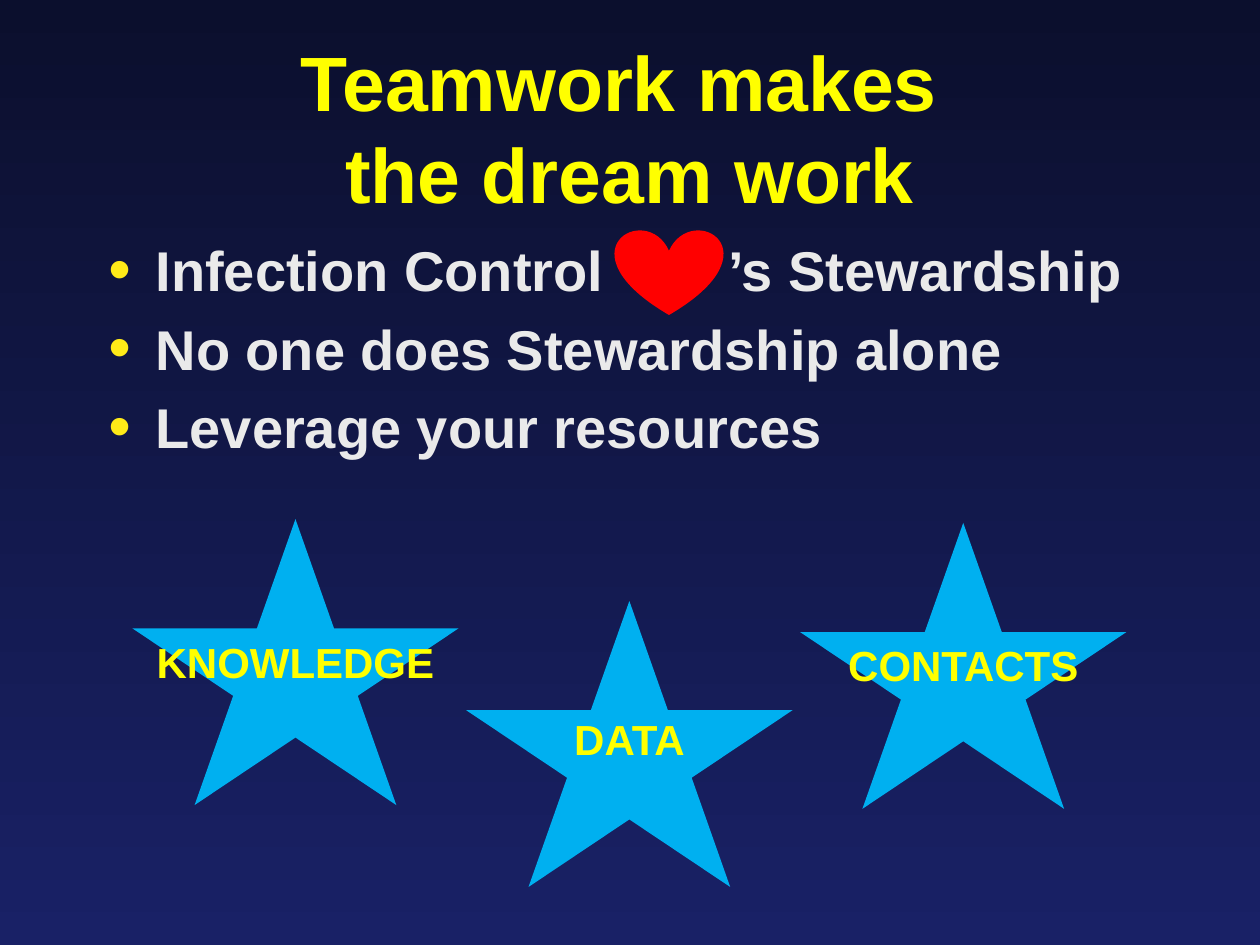
from dataclasses import dataclass

from lxml import etree
from pptx import Presentation
from pptx import util as u
from pptx.dml.color import RGBColor
from pptx.enum import shapes, text
from pptx.oxml import ns

YELLOW, RED, SKY, PALE = "FFFF00", "FF0000", "00B0F0", "EAEAEA"
WIDE, HIGH = 2.59, 2.27


@dataclass
class Star:
    """A labelled star: its top, and the label's drop and width."""
    name: str
    top: float
    drop: float
    width: float


STARS = [
    Star("KNOWLEDGE", 4.12, 0.88, 2.43),
    Star("DATA", 4.77, 0.84, 1.09),
    Star("CONTACTS", 4.15, 0.88, 2.05),
]
POINTS = [
    "Infection Control\t’s Stewardship",
    "No one does Stewardship alone",
    "Leverage your resources",
]


def paint(color, tone: str) -> None:
    """Give a colour object a hex tone."""
    color.rgb = RGBColor.from_string(tone)


def place(shape, *box: float) -> None:
    """Move and size a shape in inches."""
    shape.left, shape.top, shape.width, shape.height = map(u.Inches, box)


def style(para, size: int, tone: str) -> None:
    """Set a paragraph in bold Arial."""
    font = para.font
    font.name, font.size, font.bold = "Arial", u.Pt(size), True
    font.color.rgb = RGBColor.from_string(tone)


def add(parent, tag: str, **attrs: str):
    """Append a DrawingML element."""
    return etree.SubElement(parent, ns.qn(tag), attrs)


def draw(slide, kind, tone: str, *box: float) -> None:
    """Draw a flat preset shape."""
    shape = slide.shapes.add_shape(kind, *map(u.Inches, box))
    shape.shadow.inherit = False
    shape.fill.solid()
    paint(shape.fill.fore_color, tone)
    shape.line.fill.background()


def label(slide, name: str, *box: float) -> None:
    """Write a centred star label."""
    frame = slide.shapes.add_textbox(*map(u.Inches, box)).text_frame
    frame.word_wrap = False
    frame.auto_size = text.MSO_AUTO_SIZE.SHAPE_TO_FIT_TEXT
    para = frame.paragraphs[0]
    para.text, para.alignment = name, text.PP_ALIGN.CENTER
    style(para, 24, YELLOW)


def head(slide) -> None:
    """Fill the title placeholder."""
    title = slide.shapes.title
    place(title, 0.75, 0.38, 8.5, 1.25)
    frame = title.text_frame
    frame.auto_size = text.MSO_AUTO_SIZE.NONE
    frame.text = "Teamwork makes \vthe dream work"
    style(frame.paragraphs[0], 44, YELLOW)


def points(slide) -> None:
    """Fill the body placeholder with bullets."""
    body = slide.placeholders[1]
    place(body, 0.76, 1.82, 8.5, 4.5)
    frame = body.text_frame
    frame.auto_size = text.MSO_AUTO_SIZE.NONE
    frame.text = "\n".join(POINTS)
    for para in frame.paragraphs:
        props = para._p.get_or_add_pPr()
        add(add(props, "a:buClr"), "a:srgbClr", val="FFEA18")
        add(props, "a:buSzPct", val="115000")
        if "\t" in para.text:
            stops = add(props, "a:tabLst")
            add(stops, "a:tab", pos=str(u.Inches(4.92)), algn="l")
        style(para, 32, PALE)


def main() -> None:
    """Build the slide and save it."""
    deck = Presentation()
    deck.slide_width, deck.slide_height = u.Inches(10), u.Inches(7.5)
    slide = deck.slides.add_slide(deck.slide_layouts[1])
    fill = slide.background.fill
    fill.gradient()
    fill.gradient_angle = 270
    for stop, tone in zip(fill.gradient_stops, ("0B0F2D", "192166")):
        paint(stop.color, tone)
    head(slide)
    points(slide)
    for i, star in enumerate(STARS):
        left = 1.05 + 2.65 * i
        draw(slide, shapes.MSO_SHAPE.STAR_5_POINT, SKY,
             left, star.top, WIDE, HIGH)
        label(slide, star.name, left + (WIDE - star.width) / 2,
              star.top + star.drop, star.width, 0.5)
    draw(slide, shapes.MSO_SHAPE.HEART, RED, 4.88, 1.82, 0.86, 0.68)
    deck.save("out.pptx")


if __name__ == "__main__":
    main()
